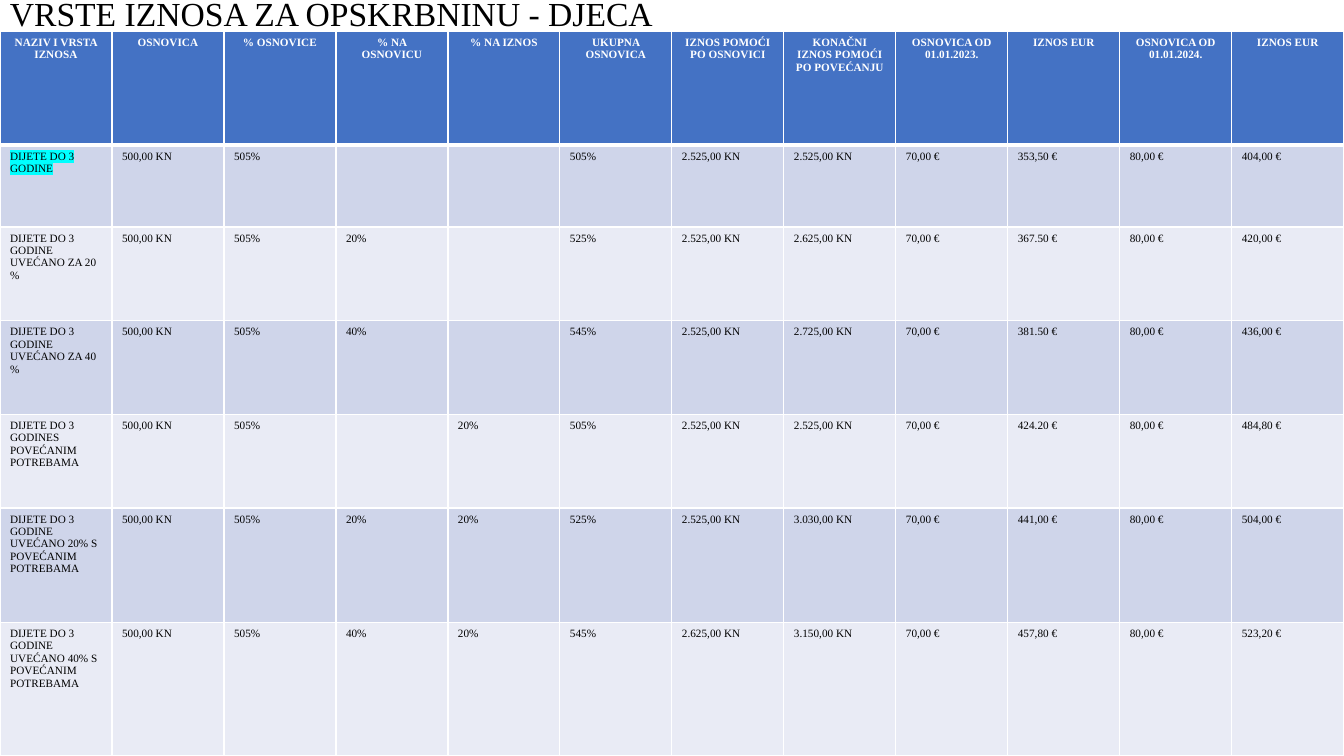
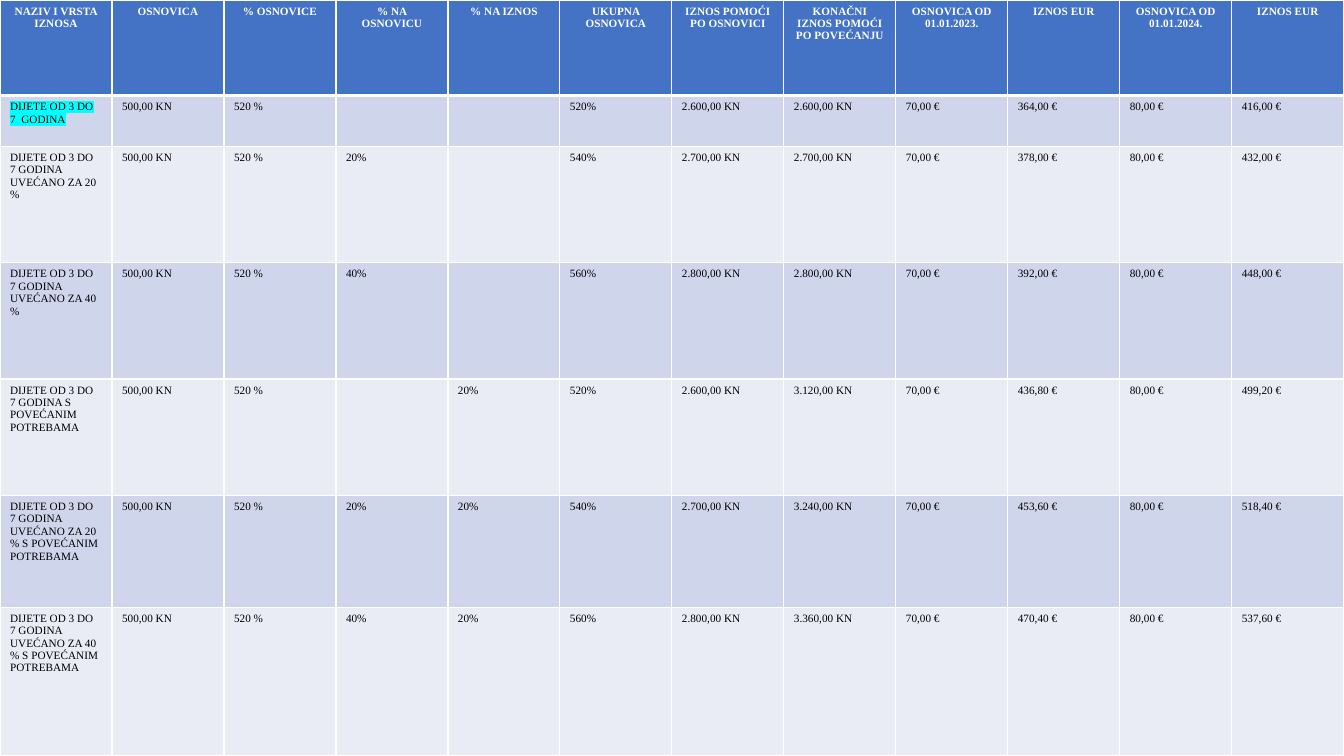
import pptx
import pptx.dml.color
import pptx.enum.text
import pptx.oxml
import pptx.oxml.ns
import pptx.util
from dataclasses import dataclass
from lxml import etree

Cm = pptx.util.Cm
Pt = pptx.util.Pt


@dataclass(frozen=True)
class Theme:
    font: str = "Times New Roman"
    title_size: int = 24
    table_size: int = 8
    text: str = "000000"
    header_text: str = "FFFFFF"
    header_fill: str = "4472C4"
    bands: tuple = ("CFD5EA", "E9EBF5")
    border: str = "FFFFFF"
    border_width: int = 1
    header_rule_width: int = 3
    highlight: str = "00FFFF"


THEME = Theme()
SLIDE_WIDTH, SLIDE_HEIGHT = Cm(33.87), Cm(19.05)
TITLE_HEIGHT = Cm(0.79)

HEADERS = [
    "NAZIV I VRSTA IZNOSA", "OSNOVICA", "% OSNOVICE", "% NA OSNOVICU",
    "% NA IZNOS", "UKUPNA OSNOVICA", "IZNOS POMOĆI PO OSNOVICI",
    "KONAČNI IZNOS POMOĆI PO POVEĆANJU", "OSNOVICA OD 01.01.2023.",
    "IZNOS EUR", "OSNOVICA OD 01.01.2024.", "IZNOS EUR",
]
BASE_KN, BASE_2023, BASE_2024 = "500,00 KN", "70,00 €", "80,00 €"

SLIDES = [
    {
        "title": "VRSTE IZNOSA ZA OPSKRBNINU - DJECA",
        "base_percent": "505%",
        "row_heights": [2.87, 2.06, 2.36, 2.36, 2.36, 2.88, 3.36],
        "rows": [
            ("DIJETE DO 3 GODINE",
             "", "", "505%", "2.525,00 KN", "2.525,00 KN", "353,50 €", "404,00 €"),
            ("DIJETE DO 3 GODINE UVEĆANO ZA 20 %",
             "20%", "", "525%", "2.525,00 KN", "2.625,00 KN", "367.50 €", "420,00 €"),
            ("DIJETE DO 3 GODINE UVEĆANO ZA 40 %",
             "40%", "", "545%", "2.525,00 KN", "2.725,00 KN", "381.50 €", "436,00 €"),
            ("DIJETE DO 3 GODINES POVEĆANIM POTREBAMA",
             "", "20%", "505%", "2.525,00 KN", "2.525,00 KN", "424.20 €", "484,80 €"),
            ("DIJETE DO 3 GODINE UVEĆANO 20% S POVEĆANIM POTREBAMA",
             "20%", "20%", "525%", "2.525,00 KN", "3.030,00 KN", "441,00 €", "504,00 €"),
            ("DIJETE DO 3 GODINE UVEĆANO 40% S POVEĆANIM POTREBAMA",
             "40%", "20%", "545%", "2.625,00 KN", "3.150,00 KN", "457,80 €", "523,20 €"),
        ],
    },
    {
        "title": None,
        "base_percent": "520 %",
        "row_heights": [2.41, 1.28, 2.93, 2.93, 2.93, 2.82, 3.75],
        "rows": [
            ("DIJETE OD 3 DO 7  GODINA",
             "", "", "520%", "2.600,00 KN", "2.600,00 KN", "364,00 €", "416,00 €"),
            ("DIJETE OD 3 DO 7 GODINA UVEĆANO ZA 20 %",
             "20%", "", "540%", "2.700,00 KN", "2.700,00 KN", "378,00 €", "432,00 €"),
            ("DIJETE OD 3 DO 7 GODINA UVEĆANO ZA 40 %",
             "40%", "", "560%", "2.800,00 KN", "2.800,00 KN", "392,00 €", "448,00 €"),
            ("DIJETE OD 3 DO 7 GODINA S POVEĆANIM POTREBAMA",
             "", "20%", "520%", "2.600,00 KN", "3.120,00 KN", "436,80 €", "499,20 €"),
            ("DIJETE OD 3 DO 7 GODINA UVEĆANO ZA 20 % S POVEĆANIM POTREBAMA",
             "20%", "20%", "540%", "2.700,00 KN", "3.240,00 KN", "453,60 €", "518,40 €"),
            ("DIJETE OD 3 DO 7 GODINA UVEĆANO ZA 40 % S POVEĆANIM POTREBAMA",
             "40%", "20%", "560%", "2.800,00 KN", "3.360,00 KN", "470,40 €", "537,60 €"),
        ],
    },
]


def rgb(value):
    return pptx.dml.color.RGBColor.from_string(value)


def add_color(parent, tag, color):
    element = etree.SubElement(parent, pptx.oxml.ns.qn(tag))
    etree.SubElement(element, pptx.oxml.ns.qn("a:srgbClr"), val=color)


def style_font(font, size, color, bold=False):
    font.name = THEME.font
    font.size = Pt(size)
    font.bold = bold
    font.color.rgb = rgb(color)


def add_title(slide, text):
    frame = slide.shapes.add_textbox(0, 0, SLIDE_WIDTH, TITLE_HEIGHT).text_frame
    frame.word_wrap = True
    frame.margin_top = frame.margin_bottom = 0
    frame.vertical_anchor = pptx.enum.text.MSO_ANCHOR.MIDDLE
    paragraph = frame.paragraphs[0]
    paragraph.text = text
    paragraph.line_spacing = 0.9
    style_font(paragraph.font, THEME.title_size, THEME.text)


def set_borders(cell, row_index):
    rule_side = {0: "B", 1: "T"}.get(row_index)
    properties = cell._tc.get_or_add_tcPr()
    for side in "LRTB":
        width = THEME.header_rule_width if side == rule_side else THEME.border_width
        line = etree.SubElement(properties, pptx.oxml.ns.qn(f"a:ln{side}"), w=str(Pt(width)))
        add_color(line, "a:solidFill", THEME.border)


def fill_cell(cell, text, row_index):
    is_header = row_index == 0
    set_borders(cell, row_index)
    cell.fill.solid()
    cell.fill.fore_color.rgb = rgb(
        THEME.header_fill if is_header else THEME.bands[(row_index - 1) % 2])
    paragraph = cell.text_frame.paragraphs[0]
    paragraph.text = text
    style_font(paragraph.font, THEME.table_size,
               THEME.header_text if is_header else THEME.text, is_header)
    if is_header:
        paragraph.alignment = pptx.enum.text.PP_ALIGN.CENTER


def add_amounts_table(slide, content, top):
    percent = content["base_percent"]
    rows = [HEADERS] + [
        (name, BASE_KN, percent, *amounts, BASE_2023, eur_2023, BASE_2024, eur_2024)
        for name, *amounts, eur_2023, eur_2024 in content["rows"]
    ]
    table = slide.shapes.add_table(
        len(rows), len(HEADERS), 0, top, SLIDE_WIDTH, SLIDE_HEIGHT - top).table
    table.horz_banding = False
    for column in table.columns:
        column.width = SLIDE_WIDTH // len(HEADERS)
    for row_index, (values, height) in enumerate(zip(rows, content["row_heights"])):
        table.rows[row_index].height = Cm(height)
        for column_index, text in enumerate(values):
            fill_cell(table.cell(row_index, column_index), text, row_index)
    age_group = table.cell(1, 0).text_frame.paragraphs[0].runs[0]
    add_color(age_group._r.get_or_add_rPr(), "a:highlight", THEME.highlight)


def main():
    presentation = pptx.Presentation()
    presentation.slide_width, presentation.slide_height = SLIDE_WIDTH, SLIDE_HEIGHT
    for content in SLIDES:
        slide = presentation.slides.add_slide(presentation.slide_layouts[6])
        if content["title"]:
            add_title(slide, content["title"])
        add_amounts_table(slide, content, TITLE_HEIGHT if content["title"] else 0)
    presentation.save("out.pptx")


if __name__ == "__main__":
    main()
